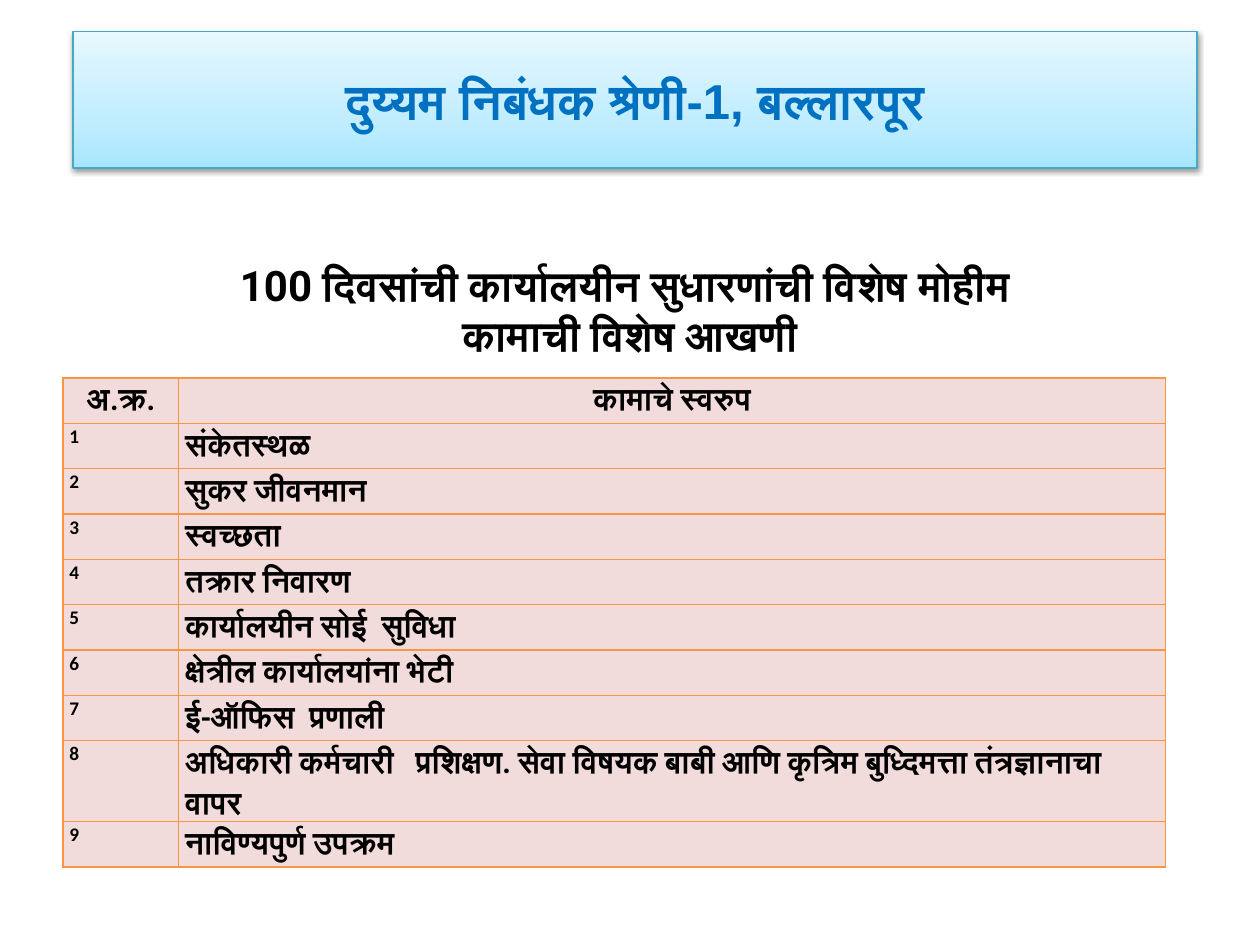
from lxml import etree
from pptx import Presentation
from pptx.dml.color import RGBColor
from pptx.enum.shapes import MSO_SHAPE
from pptx.enum.text import MSO_ANCHOR, MSO_AUTO_SIZE, PP_ALIGN
from pptx.oxml.ns import qn
from pptx.util import Inches, Pt

RECTANGLE = MSO_SHAPE.RECTANGLE
MIDDLE = MSO_ANCHOR.MIDDLE
GROW = MSO_AUTO_SIZE.SHAPE_TO_FIT_TEXT
CENTER, LEFT = PP_ALIGN.CENTER, PP_ALIGN.LEFT

COLORS = {
    "title": "0070C0", "text": "000000", "banner_line": "46AAC5",
    "banner_low": "A7E6FF", "banner_mid": "C1EDFF", "banner_high": "E7F8FF",
    "cell": "F2DCDB", "border": "F79646", "shadow": "000000",
}
BANNER_STOPS = ((0, "banner_low"), (35, "banner_mid"), (100, "banner_high"))

HEADINGS = ("अ.क्र.", "कामाचे स्वरुप")
WORKS = (
    "संकेतस्थळ",
    "सुकर जीवनमान",
    "स्वच्छता",
    "तक्रार निवारण",
    "कार्यालयीन सोई  सुविधा",
    "क्षेत्रील कार्यालयांना भेटी",
    "ई-ऑफिस  प्रणाली",
    "अधिकारी कर्मचारी   प्रशिक्षण. सेवा विषयक बाबी आणि कृत्रिम बुध्दिमत्ता तंत्रज्ञानाचा वापर",
    "नाविण्यपुर्ण उपक्रम",
)


def add_node(parent, tag, **attributes):
    """Append a DrawingML element and return it."""
    return etree.SubElement(parent, qn(f"a:{tag}"), attributes)


class SlideBuilder:
    """Holds the style and the slide; places are shares of the slide's size."""

    def __init__(self, deck):
        """Add a blank slide to the deck."""
        self.width, self.height = deck.slide_width, deck.slide_height
        self.slide = deck.slides.add_slide(deck.slide_layouts[6])

    def box(self, left, top, width, height):
        """Turn shares into lengths."""
        return (int(left * self.width), int(top * self.height),
                int(width * self.width), int(height * self.height))

    def set_text(self, frame, text, font, size, color="text", align=CENTER, spacing=None):
        """Fill a text frame with bold, styled paragraphs."""
        frame.text = text
        for paragraph in frame.paragraphs:
            paragraph.alignment = align
            if spacing:
                paragraph.line_spacing = spacing
            for run in paragraph.runs:
                run.font.name, run.font.size, run.font.bold = font, Pt(size), True
                run.font.color.rgb = RGBColor.from_string(COLORS[color])
                add_node(run._r.get_or_add_rPr(), "cs", typeface=font)

    def banner(self, place, text):
        """Draw the shaded title banner."""
        banner = self.slide.shapes.add_shape(RECTANGLE, *self.box(*place))
        banner.line.color.rgb = RGBColor.from_string(COLORS["banner_line"])
        banner.line.width = Pt(0.75)
        banner.fill.gradient()
        banner.fill.gradient_angle = 90
        stops = banner._element.spPr.find(qn("a:gradFill")).find(qn("a:gsLst"))
        for stop in list(stops):
            stops.remove(stop)
        for share, color in BANNER_STOPS:
            stop = add_node(stops, "gs", pos=str(share * 1000))
            add_node(stop, "srgbClr", val=COLORS[color])
        banner.shadow.inherit = False
        effects = banner._element.spPr.find(qn("a:effectLst"))
        shadow = add_node(effects, "outerShdw", blurRad="40000", dist="20000",
                          dir="5400000", rotWithShape="0")
        shade = add_node(shadow, "srgbClr", val=COLORS["shadow"])
        add_node(shade, "alpha", val="38000")
        banner.text_frame.word_wrap = True
        banner.text_frame.vertical_anchor = MIDDLE
        self.set_text(banner.text_frame, text, "Arial", 28, "title")

    def heading(self, place, text):
        """Add a centred heading that grows with its text."""
        frame = self.slide.shapes.add_textbox(*self.box(*place)).text_frame
        frame.word_wrap, frame.auto_size = True, GROW
        frame.vertical_anchor = MIDDLE
        self.set_text(frame, text, "Roboto", 24)

    def cell(self, cell, text, size, align):
        """Style one bordered table cell."""
        cell.margin_left = cell.margin_right = Inches(0.05)
        cell.margin_top = cell.margin_bottom = 0
        self.set_text(cell.text_frame, text, "Calibri", size, align=align, spacing=1.07)
        properties = cell._tc.get_or_add_tcPr()
        for side in ("lnL", "lnR", "lnT", "lnB"):
            border = add_node(properties, side, w=str(int(Pt(1))))
            add_node(add_node(border, "solidFill"), "srgbClr", val=COLORS["border"])
        cell.fill.solid()
        cell.fill.fore_color.rgb = RGBColor.from_string(COLORS["cell"])

    def table(self, place, column_shares, headings, works):
        """Add the numbered table of works."""
        rows = [headings, *((str(i), work) for i, work in enumerate(works, 1))]
        left, top, width, height = self.box(*place)
        table = self.slide.shapes.add_table(
            len(rows), len(headings), left, top, width, height).table
        for column, share in zip(table.columns, column_shares):
            column.width = int(share * width)
        for r, row in enumerate(rows):
            for c, text in enumerate(row):
                size = 11 if r and c == 0 else 18
                self.cell(table.cell(r, c), text, size, LEFT if r else CENTER)


def main():
    """Build and save the slide."""
    deck = Presentation()
    deck.slide_width, deck.slide_height = Inches(10), Inches(7.5)
    page = SlideBuilder(deck)
    page.banner((0.058, 0.033, 0.892, 0.145), "दुय्यम निबंधक श्रेणी-1, बल्लारपूर")
    page.heading((0, 0.267, 1, 0.121),
                 "100 दिवसांची कार्यालयीन सुधारणांची विशेष मोहीम \nकामाची विशेष आखणी")
    page.table((0.05, 0.4, 0.875, 0.48), (0.105, 0.895), HEADINGS, WORKS)
    deck.save("out.pptx")


if __name__ == "__main__":
    main()
